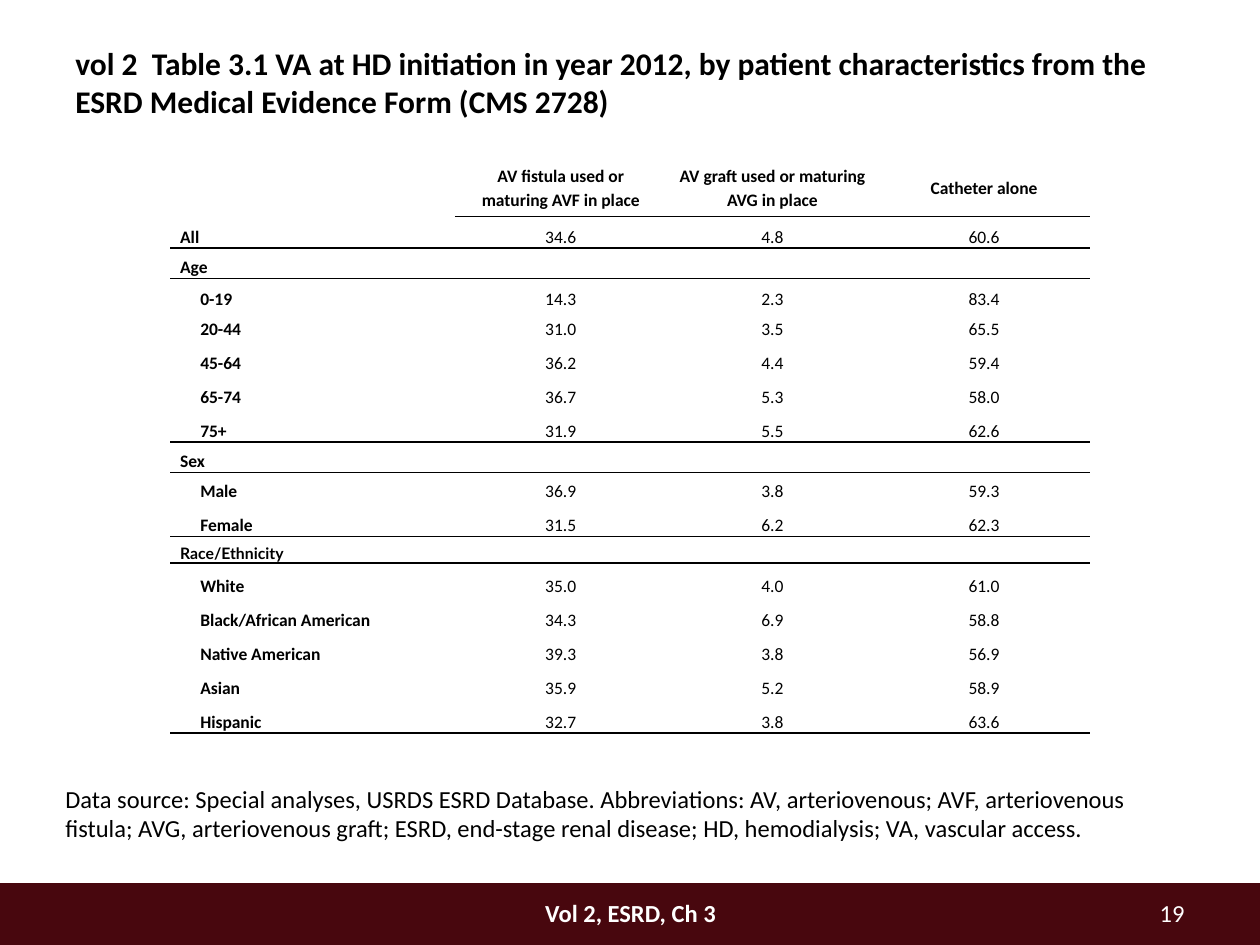
import pptx
import pptx.util
import pptx.dml.color
import pptx.enum.shapes
import pptx.enum.text
import pptx.oxml.ns
import lxml.etree

Inches = pptx.util.Inches
Align = pptx.enum.text.PP_ALIGN
Anchor = pptx.enum.text.MSO_ANCHOR

COLORS = {"ink": "000000", "band": "48070E", "paper": "FFFFFF"}

TITLE = ("vol 2  Table 3.1 VA at HD initiation in year 2012, by patient "
         "characteristics from the ESRD Medical Evidence Form (CMS 2728)")
SOURCE = ("Data source: Special analyses, USRDS ESRD Database. Abbreviations: "
          "AV, arteriovenous; AVF, arteriovenous fistula; AVG, arteriovenous graft; "
          "ESRD, end-stage renal disease; HD, hemodialysis; VA, vascular access.")

HEAD = ("", "AV fistula used or maturing AVF in place",
        "AV graft used or maturing AVG in place", "Catheter alone")
GROUPS = [
    (("All", "34.6", "4.8", "60.6"), []),
    (("Age", "", "", ""), [
        ("0-19", "14.3", "2.3", "83.4"),
        ("20-44", "31.0", "3.5", "65.5"),
        ("45-64", "36.2", "4.4", "59.4"),
        ("65-74", "36.7", "5.3", "58.0"),
        ("75+", "31.9", "5.5", "62.6")]),
    (("Sex", "", "", ""), [
        ("Male", "36.9", "3.8", "59.3"),
        ("Female", "31.5", "6.2", "62.3")]),
    (("Race/Ethnicity", "", "", ""), [
        ("White", "35.0", "4.0", "61.0"),
        ("Black/African American", "34.3", "6.9", "58.8"),
        ("Native American", "39.3", "3.8", "56.9"),
        ("Asian", "35.9", "5.2", "58.9"),
        ("Hispanic", "32.7", "3.8", "63.6")]),
]
WIDTHS = [2.26, 1.68, 1.68, 1.68]
HEIGHTS = [0.47, 0.25, 0.24, 0.25, 0.24] + [0.27] * 3 + [0.24, 0.24, 0.27, 0.21] + [0.27] * 5

BOXES = [
    ("Vol 2, ESRD, Ch 3", (3.92, 7.08, 2.17, 0.33), Align.CENTER, "paper",
     {"size": 14, "bold": True}),
    (SOURCE, (0.42, 6.17, 9.08, 0.58), Align.LEFT, "ink", {"size": 14, "bold": False}),
    (TITLE, (0.5, 0.3, 9, 0.62), Align.LEFT, "ink", {"size": 18, "bold": True}),
    ("19", (8.5, 7.08, 1, 0.3), Align.RIGHT, "paper", {"size": 14, "bold": False}),
]


def paint(hue):
    return pptx.dml.color.RGBColor.from_string(COLORS[hue])


def write(para, text, hue, form):
    run = para.add_run()
    run.text = text
    for key, value in ({"name": "Calibri"} | form).items():
        setattr(run.font, key, pptx.util.Pt(value) if key == "size" else value)
    run.font.color.rgb = paint(hue)


def add(parent, tag, **attrs):
    return lxml.etree.SubElement(parent, pptx.oxml.ns.qn(tag), **attrs)


def rule(cell, side):
    line = add(cell._tc.get_or_add_tcPr(), "a:" + side, w=str(pptx.util.Pt(1)))
    add(add(line, "a:solidFill"), "a:srgbClr", val=COLORS["ink"])


def fill_cell(cell, text, row, col, level):
    cell.margin_left = cell.margin_right = Inches(0.08)
    cell.margin_top = cell.margin_bottom = 0
    cell.vertical_anchor = Anchor.MIDDLE if row == 0 else Anchor.BOTTOM
    para = cell.text_frame.paragraphs[0]
    if not text:
        add(para._p, "a:endParaRPr", sz="900")
        return
    para.line_spacing = 1.15
    para.alignment = Align.CENTER if col else Align.LEFT
    if level and not col:
        para._p.get_or_add_pPr().set("marL", str(Inches(0.16)))
    form = {"size": 10, "bold": row == 0 or col == 0}
    if text == "Race/Ethnicity":
        form |= {"size": 9, "name": "Lato"}
    write(para, text, "ink", form)


def add_grid(slide):
    rows, levels, ends = [HEAD], [0], {0}
    for top, members in GROUPS:
        rows += [top] + members
        levels += [0] + [1] * len(members)
        ends.add(len(rows) - 1)
    frame = slide.shapes.add_table(len(rows), len(HEAD), Inches(1.35), Inches(1.25),
                                   Inches(sum(WIDTHS)), Inches(sum(HEIGHTS)))
    grid = frame.table
    grid.first_row = grid.horz_banding = False
    style = grid._tbl.tblPr.find(pptx.oxml.ns.qn("a:tableStyleId"))
    style.text = "{2D5ABB26-0587-4C30-8999-92F81FD0307C}"
    for column, width in zip(grid.columns, WIDTHS):
        column.width = Inches(width)
    for row, (texts, level) in enumerate(zip(rows, levels)):
        grid.rows[row].height = Inches(HEIGHTS[row])
        for col, text in enumerate(texts):
            cell = grid.cell(row, col)
            fill_cell(cell, text, row, col, level)
            for side, edge in (("lnT", row - 1), ("lnB", row)):
                if edge in ends and (edge or col):
                    rule(cell, side)
            cell.fill.background()


def add_box(slide, text, place, align, hue, form):
    frame = slide.shapes.add_textbox(*map(Inches, place)).text_frame
    frame.word_wrap = True
    para = frame.paragraphs[0]
    para.alignment = align
    write(para, text, hue, form)


def main():
    deck = pptx.Presentation()
    deck.slide_width, deck.slide_height = Inches(10), Inches(7.5)
    slide = deck.slides.add_slide(deck.slide_layouts[6])
    band = slide.shapes.add_shape(pptx.enum.shapes.MSO_SHAPE.RECTANGLE,
                                  0, Inches(7.01), Inches(10), Inches(0.49))
    band.shadow.inherit = False
    band.fill.solid()
    band.fill.fore_color.rgb = paint("band")
    band.line.fill.background()
    add_grid(slide)
    for box in BOXES:
        add_box(slide, *box)
    deck.save("out.pptx")


if __name__ == "__main__":
    main()
